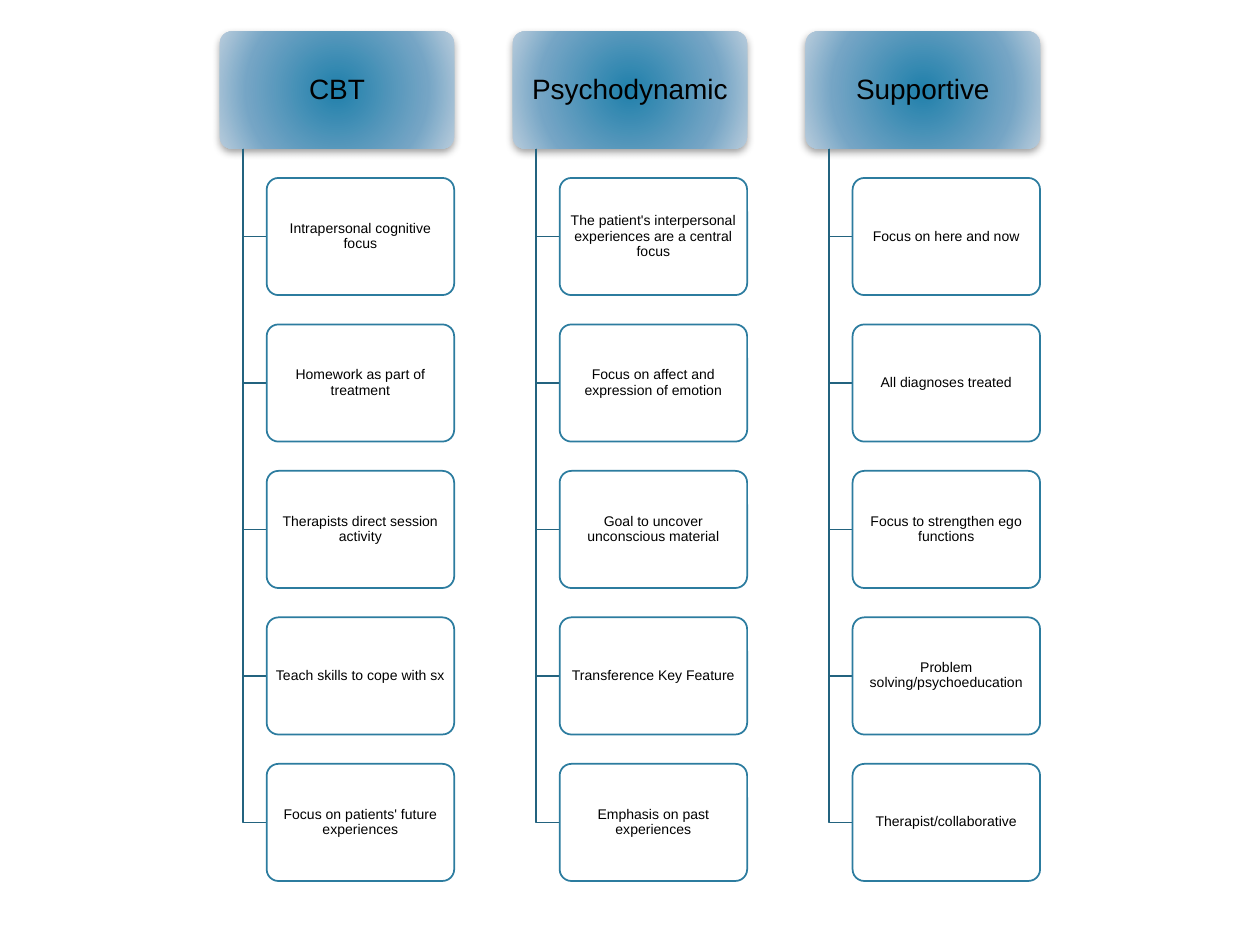
from dataclasses import dataclass

from lxml.etree import SubElement
from pptx import Presentation
from pptx.dml.color import RGBColor
from pptx.enum.shapes import MSO_SHAPE
from pptx.enum.text import MSO_ANCHOR, PP_ALIGN
from pptx.oxml import parse_xml
from pptx.oxml.ns import nsdecls, qn
from pptx.util import Inches, Pt

SLIDE_W, SLIDE_H = 10, 7.5
BOX_W, BOX_H = 1.86, 0.93
TOP = 0.25
STEP = 1.25
INDENT = BOX_W / 10
ITEM_W = BOX_W - 2 * INDENT
STOPS = [(0, "2080AB"), (69, "75A5C5"), (100, "B8CCDC")]


@dataclass
class Therapy:
    name: str
    features: list[str]


THERAPIES = [
    Therapy("CBT", [
        "Intrapersonal cognitive focus",
        "Homework as part of treatment",
        "Therapists direct session activity",
        "Teach skills to cope with sx",
        "Focus on patients' future experiences",
    ]),
    Therapy("Psychodynamic", [
        "The patient's interpersonal experiences are a central focus",
        "Focus on affect and expression of emotion",
        "Goal to uncover unconscious material",
        "Transference Key Feature",
        "Emphasis on past experiences",
    ]),
    Therapy("Supportive", [
        "Focus on here and now",
        "All diagnoses treated",
        "Focus to strengthen ego functions",
        "Problem solving/psychoeducation",
        "Therapist/collaborative",
    ]),
]


def rgb(color: str) -> RGBColor:
    return RGBColor.from_string(color)


def add_box(s, x: float, y: float, w: float, text: str, size: int, inset: float):
    sp = s.shapes.add_shape(MSO_SHAPE.ROUNDED_RECTANGLE,
                            Inches(x), Inches(y), Inches(w), Inches(BOX_H))
    sp.adjustments[0] = 0.1
    sp.shadow.inherit = False
    tf = sp.text_frame
    tf.word_wrap = True
    tf.vertical_anchor = MSO_ANCHOR.MIDDLE
    tf.margin_left = tf.margin_right = Inches(inset)
    tf.margin_top = tf.margin_bottom = Inches(inset / 2)
    tf.text = text
    p = tf.paragraphs[0]
    p.alignment = PP_ALIGN.CENTER
    p.line_spacing = 0.9
    font = p.runs[0].font
    font.name = "Arial"
    font.size = Pt(size)
    font.color.rgb = rgb("000000")
    return sp


def add_header(s, x: float, text: str) -> None:
    sp = add_box(s, x, TOP, BOX_W, text, 16, 0.03)
    sp.line.fill.background()
    stops = "".join(f'<a:gs pos="{pos * 1000}"><a:srgbClr val="{color}"/></a:gs>'
                    for pos, color in STOPS)
    sp_pr = sp.element.spPr
    sp_pr.insert(2, parse_xml(
        f'<a:gradFill {nsdecls("a")}><a:gsLst>{stops}</a:gsLst><a:path path="circle">'
        '<a:fillToRect l="100000" t="100000" r="100000" b="100000"/>'
        '</a:path></a:gradFill>'))
    sp_pr.find(qn("a:effectLst")).append(parse_xml(
        f'<a:outerShdw {nsdecls("a")} blurRad="{Pt(5)}" dist="{Pt(2)}" dir="5400000" '
        'rotWithShape="0"><a:srgbClr val="000000"><a:alpha val="40000"/>'
        '</a:srgbClr></a:outerShdw>'))


def add_branch(s, x: float, y: float) -> None:
    start_y = TOP + BOX_H
    builder = s.shapes.build_freeform(Inches(x), Inches(start_y))
    builder.add_line_segments([(Inches(x), Inches(y)),
                               (Inches(x + INDENT), Inches(y))], close=False)
    sp = builder.convert_to_shape()
    sp.shadow.inherit = False
    sp.fill.background()
    sp.line.color.rgb = rgb("23637F")
    sp.line.width = Pt(1)


def add_feature(s, x: float, y: float, text: str) -> None:
    sp = add_box(s, x, y, ITEM_W, text, 8, 0.02)
    sp.fill.solid()
    sp.fill.fore_color.rgb = rgb("FFFFFF")
    color = sp.element.spPr.find(qn("a:solidFill"))[0]
    SubElement(color, qn("a:alpha")).set("val", "90000")
    sp.line.color.rgb = rgb("2C7C9F")
    sp.line.width = Pt(1)


def add_therapy(s, x: float, therapy: Therapy) -> None:
    add_header(s, x, therapy.name)
    for row, feature in enumerate(therapy.features, start=1):
        y = TOP + row * BOX_H * STEP
        add_branch(s, x + INDENT, y + BOX_H / 2)
        add_feature(s, x + 2 * INDENT, y, feature)


def main() -> None:
    prs = Presentation()
    prs.slide_width, prs.slide_height = Inches(SLIDE_W), Inches(SLIDE_H)
    s = prs.slides.add_slide(prs.slide_layouts[6])
    pitch = BOX_W * STEP
    left = (SLIDE_W - pitch * (len(THERAPIES) - 1) - BOX_W) / 2
    for col, therapy in enumerate(THERAPIES):
        add_therapy(s, left + col * pitch, therapy)
    prs.save("out.pptx")


if __name__ == "__main__":
    main()
